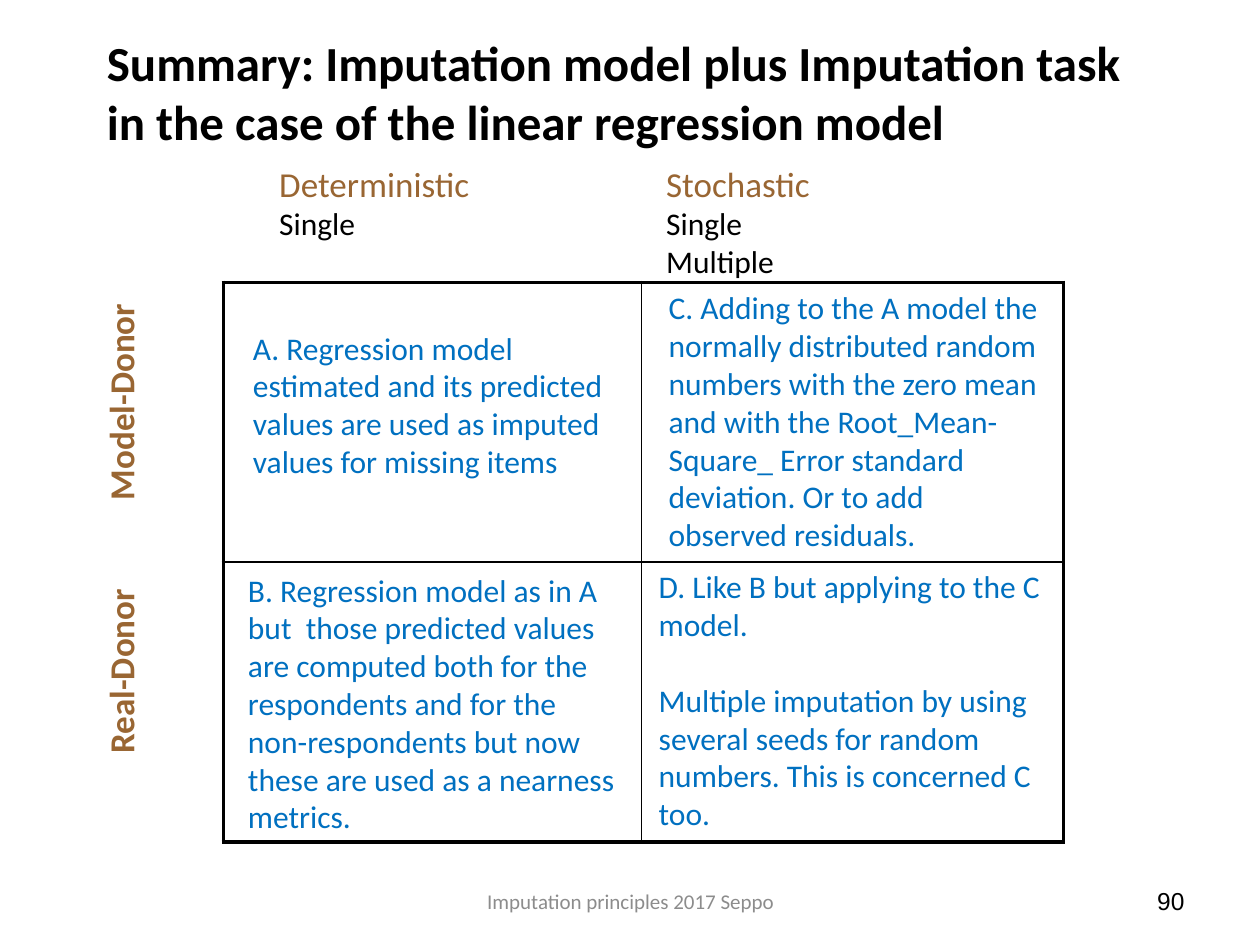
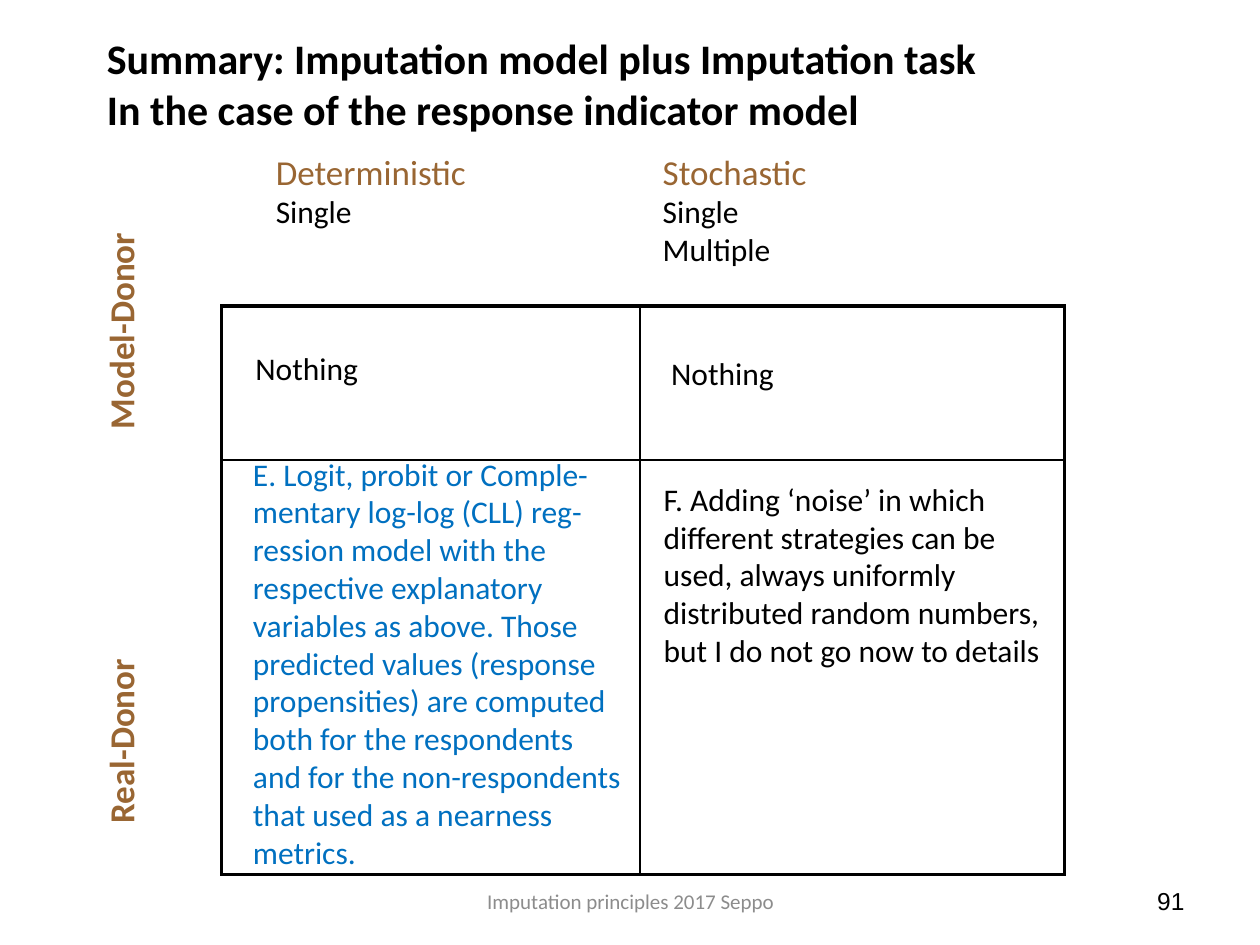
from lxml import etree
from pptx import Presentation
from pptx.dml.color import RGBColor
from pptx.enum.text import MSO_ANCHOR, MSO_AUTO_SIZE, PP_ALIGN
from pptx.oxml.ns import qn
from pptx.util import Cm, Pt

LEFT, CENTER, RIGHT = PP_ALIGN.LEFT, PP_ALIGN.CENTER, PP_ALIGN.RIGHT
TOP, MIDDLE = MSO_ANCHOR.TOP, MSO_ANCHOR.MIDDLE
NO_FIT = MSO_AUTO_SIZE.NONE

BLACK, BROWN, BLUE, GRAY = "000000", "996633", "0070C0", "8C8C8C"
FONT = "Calibri"
OUTER, INNER = Pt(2.25), Pt(1)
COLUMN_GAP = 7.8  # from the Deterministic heading to the Stochastic one


def set_text(tf, text, size, color, bold=False, align=LEFT, font=FONT, anchor=TOP):
    tf.text = text
    tf.word_wrap = True
    tf.auto_size = NO_FIT
    tf.vertical_anchor = anchor
    for p in tf.paragraphs:
        p.alignment = align
        for r in p.runs:
            r.font.name = font
            r.font.size = Pt(size)
            r.font.bold = bold
            r.font.color.rgb = RGBColor.from_string(color)


def add_text(s, box, text, size, color, **style):
    sp = s.shapes.add_textbox(*[Cm(v) for v in box])
    set_text(sp.text_frame, text, size, color, **style)
    return sp


# Slide contents, lengths in cm
slides = [
    {
        "number": "90",
        "title": "Summary: Imputation model plus Imputation task\n"
                 "in the case of the linear regression model",
        "title_size": 28,
        "headings": (5.38, 3.15),
        "table": (4.5, 5.69),
        "cols": (8.43, 8.51),
        "rows": (5.64, 5.64),
        "donor_centers": (8.1, 13.53),
        "texts": [
            ((4.85, 6.5, 7.75, 3.33), BLUE,
             "A. Regression model estimated and its predicted values are used "
             "as imputed values for missing items"),
            ((4.75, 11.38, 7.92, 5.64), BLUE,
             "B. Regression model as in A but  those predicted values are "
             "computed both for the  respondents and for the non-respondents "
             "but now these are used as a nearness metrics."),
            ((13.23, 5.69, 8.13, 5.64), BLUE,
             "C. Adding to the A model the normally distributed random numbers "
             "with the zero mean and with the Root_Mean- Square_ Error standard "
             "deviation. Or to add observed residuals."),
            ((13.03, 11.3, 8.33, 5.64), BLUE,
             "D. Like B but applying to the C model.\n"
             "Multiple imputation by using several seeds for random numbers. "
             "This is concerned C too."),
        ],
    },
    {
        "number": "91",
        "title": "Summary: Imputation model plus Imputation task\n"
                 "In the case of the response indicator model",
        "title_size": 24,
        "headings": (5.31, 2.9),
        "table": (4.47, 6.17),
        "cols": (8.43, 8.56),
        "rows": (3.1, 8.36),
        "donor_centers": (6.67, 14.94),
        "texts": [
            ((4.9, 6.91, 7.75, 1.02), BLACK, "Nothing"),
            ((4.85, 9.04, 7.92, 8.71), BLUE,
             "E. Logit, probit or Comple-mentary log-log (CLL) reg-ression model "
             "with the respective explanatory variables as above. Those "
             "predicted values (response propensities) are computed both for "
             "the respondents and for the non-respondents that used as a "
             "nearness metrics."),
            ((13.28, 7.01, 8.13, 1.02), BLACK, "Nothing"),
            ((13.13, 9.55, 8.33, 4.11), BLACK,
             "F. Adding ‘noise’ in which different strategies can be used, "
             "always uniformly distributed random numbers, but I do not go now "
             "to details"),
        ],
    },
]

prs = Presentation()
prs.slide_width, prs.slide_height = Cm(25.4), Cm(19.05)

for d in slides:
    s = prs.slides.add_slide(prs.slide_layouts[5])

    # Title
    title = s.shapes.title
    title.left, title.top, title.width, title.height = Cm(1.9), Cm(0.53), Cm(22), Cm(2.64)
    set_text(title.text_frame, d["title"], d["title_size"], BLACK, bold=True)

    # Two-by-two table: thick frame, thin inner lines
    x, y = d["table"]
    tbl = s.shapes.add_table(2, 2, Cm(x), Cm(y), Cm(sum(d["cols"])),
                             Cm(sum(d["rows"]))).table
    tbl.first_row = tbl.horz_banding = False
    for i in range(2):
        tbl.columns[i].width = Cm(d["cols"][i])
        tbl.rows[i].height = Cm(d["rows"][i])
    for row in range(2):
        for col in range(2):
            cell = tbl.cell(row, col)
            tcPr = cell._tc.get_or_add_tcPr()
            edges = {"lnL": col == 0, "lnR": col == 1, "lnT": row == 0, "lnB": row == 1}
            for tag, is_outer in edges.items():
                ln = etree.SubElement(tcPr, qn("a:" + tag), w=str(OUTER if is_outer else INNER))
                fill = etree.SubElement(ln, qn("a:solidFill"))
                etree.SubElement(fill, qn("a:srgbClr"), val=BLACK)
            cell.fill.background()

    # Column headings
    x, y = d["headings"]
    headings = ["Deterministic\nSingle", "Stochastic\nSingle\nMultiple"]
    for i, text in enumerate(headings):
        sp = add_text(s, (x + i * COLUMN_GAP, y, 6, 2.64), text, 18, BLACK)
        font = sp.text_frame.paragraphs[0].runs[0].font
        font.size = Pt(20)
        font.color.rgb = RGBColor.from_string(BROWN)

    # Rotated row headings
    for text, center in zip(["Model-Donor", "Real-Donor"], d["donor_centers"]):
        sp = add_text(s, (-0.1, center - 0.56, 5.08, 1.12), text, 20, BROWN,
                      bold=True, align=CENTER)
        sp.rotation = 270

    # Texts over the table cells
    for box, color, text in d["texts"]:
        sp = add_text(s, box, text, 18, color)
        for p in sp.text_frame.paragraphs[1:]:
            p.space_before = Pt(22)

    # Footer and slide number
    add_text(s, (8.69, 17.65, 8.05, 1.02), "Imputation principles 2017 Seppo", 12, GRAY,
             align=CENTER, anchor=MIDDLE)
    add_text(s, (18.21, 17.65, 5.92, 1.02), d["number"], 14, BLACK,
             align=RIGHT, font="Arial", anchor=MIDDLE)

prs.save("out.pptx")
